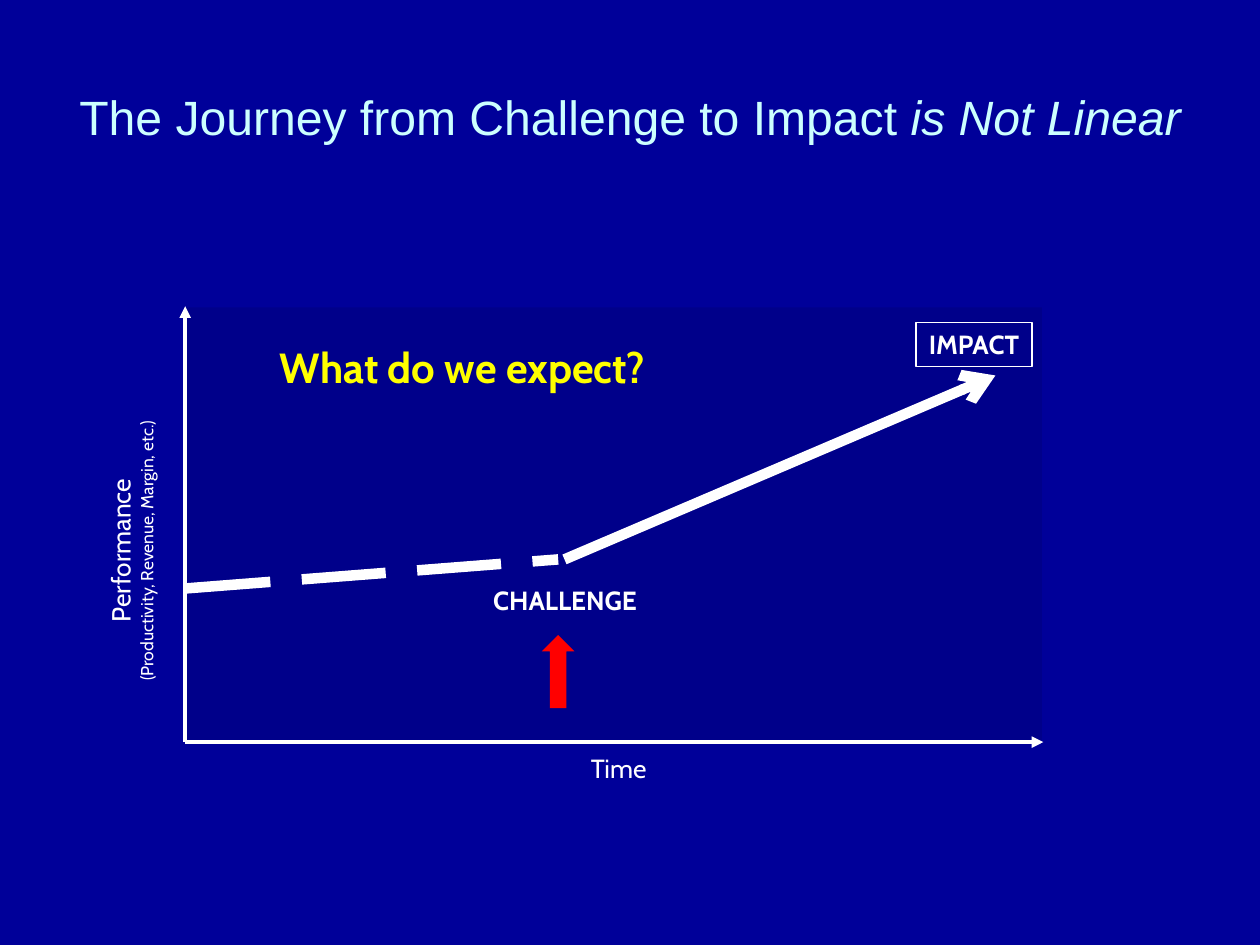
import pptx
import pptx.util
import pptx.dml.color
import pptx.enum.dml
import pptx.enum.shapes
import pptx.enum.text
import pptx.oxml.ns
import lxml.etree

RGBColor = pptx.dml.color.RGBColor
NAVY = RGBColor(0x00, 0x00, 0x99)
PLOT_NAVY = RGBColor(0x00, 0x00, 0x82)
WHITE = RGBColor(0xFF, 0xFF, 0xFF)
PALE_CYAN = RGBColor(0xCC, 0xFF, 0xFF)
YELLOW = RGBColor(0xFF, 0xFF, 0x00)
RED = RGBColor(0xFF, 0x00, 0x00)

SHAPES = pptx.enum.shapes.MSO_SHAPE
ALIGN = pptx.enum.text.PP_ALIGN
LONG_DASH = pptx.enum.dml.MSO_LINE.LONG_DASH


def add_xml(parent, tag, **attributes):
    return lxml.etree.SubElement(parent, pptx.oxml.ns.qn(tag), attributes)


class SlideBuilder:
    """Places elements on a grid of 100 columns by 75 rows."""

    COLUMNS, ROWS = 100, 75

    def __init__(self, presentation, background):
        self.column = presentation.slide_width / self.COLUMNS
        self.row = presentation.slide_height / self.ROWS
        self.slide = presentation.slides.add_slide(presentation.slide_layouts[6])
        fill = self.slide.background.fill
        fill.solid()
        fill.fore_color.rgb = background

    def place(self, *lengths):
        """Turn alternating column and row counts into slide lengths."""
        return [pptx.util.Emu(round(length * (self.row if i % 2 else self.column)))
                for i, length in enumerate(lengths)]

    def shape(self, kind, box, fill=None, opacity=None, outline=None):
        shape = self.slide.shapes.add_shape(kind, *self.place(*box))
        shape.shadow.inherit = False
        if fill is None:
            shape.fill.background()
        else:
            shape.fill.solid()
            shape.fill.fore_color.rgb = fill
        if opacity is not None:
            color = shape._element.spPr.find(".//" + pptx.oxml.ns.qn("a:srgbClr"))
            add_xml(color, "a:alpha", val=str(opacity * 1000))
        if outline is None:
            shape.line.fill.background()
        else:
            shape.line.color.rgb = outline
            shape.line.width = pptx.util.Pt(0.75)
        return shape

    def line(self, start, end, width, arrow=None, dash=None):
        line = self.slide.shapes.add_connector(
            pptx.enum.shapes.MSO_CONNECTOR.STRAIGHT, *self.place(*start, *end))
        line.line.color.rgb = WHITE
        line.line.width = pptx.util.Pt(width)
        if dash:
            line.line.dash_style = dash
        if arrow:
            outline = line._element.spPr.find(pptx.oxml.ns.qn("a:ln"))
            add_xml(outline, "a:tailEnd", type=arrow)
        add_xml(line._element.spPr, "a:effectLst")

    def text(self, box, paragraphs, **style):
        label = self.slide.shapes.add_textbox(*self.place(*box))
        self.letter(label, paragraphs, **style)
        return label

    def letter(self, shape, paragraphs, font="Cabin", color=WHITE, bold=False,
               align=ALIGN.CENTER, wrap=False, inset=None,
               anchor=pptx.enum.text.MSO_ANCHOR.TOP):
        """Fill a shape; each paragraph is a list of (text, size, italic) runs."""
        frame = shape.text_frame
        frame.word_wrap = wrap
        frame.vertical_anchor = anchor
        if not wrap:
            frame.auto_size = pptx.enum.text.MSO_AUTO_SIZE.SHAPE_TO_FIT_TEXT
        if inset is not None:
            frame.margin_left = frame.margin_right = inset
            frame.margin_top = frame.margin_bottom = inset
        for i, runs in enumerate(paragraphs):
            paragraph = frame.add_paragraph() if i else frame.paragraphs[0]
            paragraph.alignment = align
            for words, size, italic in runs:
                run = paragraph.add_run()
                run.text = words
                run.font.name = font
                run.font.size = pptx.util.Pt(size)
                run.font.bold = bold
                run.font.italic = italic
                run.font.color.rgb = color


def main():
    presentation = pptx.Presentation()
    presentation.slide_width = pptx.util.Inches(10)
    presentation.slide_height = pptx.util.Inches(7.5)
    page = SlideBuilder(presentation, NAVY)

    page.shape(SHAPES.RECTANGLE, (14.6, 24.4, 68.1, 34.4), PLOT_NAVY, opacity=64)
    origin = (14.7, 58.9)
    for axis_end in ((14.7, 24.3), (82.8, 58.9)):
        page.line(origin, axis_end, 2.25, arrow="triangle")
    page.text((45.9, 59.2, 6.5, 3.5), [[("Time", 15, False)]], align=ALIGN.LEFT)
    performance = page.text(
        (-1.2, 41.1, 23.2, 5.2),
        [[("Performance", 15, False)],
         [("(Productivity, Revenue, Margin, etc.)", 10, False)]])
    performance.rotation = 270

    page.text((5, 3, 90, 12.5),
              [[("The Journey from Challenge to Impact ", 27.5, False),
                ("is Not Linear", 27.5, True)]],
              font="Arial", color=PALE_CYAN, wrap=True,
              anchor=pptx.enum.text.MSO_ANCHOR.MIDDLE)

    page.shape(SHAPES.UP_ARROW, (43, 50.4, 2.6, 5.8), RED)
    page.line((44.8, 44.4), (79, 29.8), 6, arrow="arrow")
    page.text((38, 45.9, 13.7, 3.5), [[("CHALLENGE", 15, False)]], bold=True)
    impact = page.shape(SHAPES.RECTANGLE, (72.7, 25.6, 9.2, 3.5), outline=WHITE)
    page.letter(impact, [[("IMPACT", 15, False)]], bold=True)
    page.line((14.8, 46.7), (44.3, 44.4), 6, dash=LONG_DASH)
    page.text((20.1, 27.1, 33.2, 4.9), [[("What do we expect?", 24, False)]],
              color=YELLOW, bold=True, wrap=True, inset=0)

    presentation.save("out.pptx")


if __name__ == "__main__":
    main()
